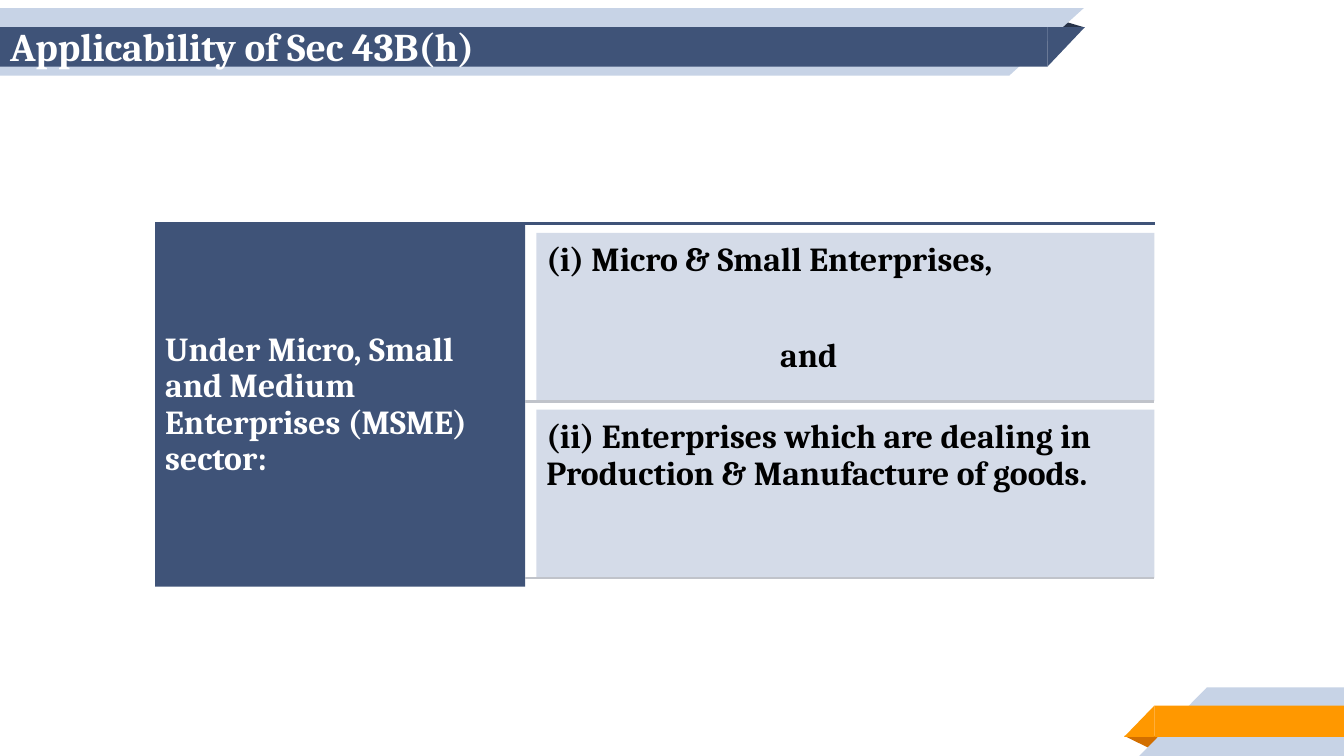
"""Build the slide on the applicability of Sec 43B(h)."""
from pptx import Presentation, util as u
from pptx.dml.color import RGBColor
from pptx.enum import shapes, text
from pptx.oxml import ns
from lxml import etree

NAVY = RGBColor(0x3F, 0x53, 0x78)
DARK_NAVY = RGBColor(0x26, 0x32, 0x48)
PALE_BLUE = RGBColor(0xC7, 0xD3, 0xE6)
PANEL = RGBColor(0xD4, 0xDB, 0xE8)
ORANGE = RGBColor(0xFF, 0x98, 0x00)
DARK_ORANGE = RGBColor(0xD2, 0x6F, 0x00)
RULE = RGBColor(0xC0, 0xC3, 0xCA)
WHITE = RGBColor(0xFF, 0xFF, 0xFF)
BLACK = RGBColor(0, 0, 0)
FONT = "Cambria"
RECTANGLE = shapes.MSO_SHAPE.RECTANGLE
TRIANGLE = shapes.MSO_SHAPE.ISOSCELES_TRIANGLE
RIGHT_TRIANGLE = shapes.MSO_SHAPE.RIGHT_TRIANGLE


def write(frame, content, size=24, color=BLACK, anchor=text.MSO_ANCHOR.TOP,
          line=0.9, after=8.4, before=0, indent=0):
    """Add one formatted paragraph to a text frame."""
    frame.word_wrap = True
    frame.auto_size = text.MSO_AUTO_SIZE.NONE
    frame.vertical_anchor = anchor
    frame.margin_left = frame.margin_right = u.Inches(0.1)
    frame.margin_top = frame.margin_bottom = u.Inches(0.1)
    paragraph = frame.add_paragraph() if frame.text else frame.paragraphs[0]
    paragraph.alignment = text.PP_ALIGN.LEFT
    paragraph.line_spacing = line
    paragraph.space_after = u.Pt(after)
    paragraph.space_before = u.Pt(before)
    if indent:
        paragraph._p.get_or_add_pPr().set("marL", str(u.Inches(indent)))
    run = paragraph.add_run()
    run.text = content
    run.font.name = FONT
    run.font.size = u.Pt(size)
    run.font.bold = True
    run.font.color.rgb = color


class Deck:
    """Hold the presentation and its current slide."""

    def __init__(self):
        self.presentation = Presentation()
        self.presentation.slide_width = u.Inches(13.33)
        self.presentation.slide_height = u.Inches(7.5)
        self.slide = self.presentation.slides.add_slide(self.presentation.slide_layouts[5])

    def shape(self, kind, box, fill, rotation=0, flip=False):
        shape = self.slide.shapes.add_shape(kind, *map(u.Inches, box))
        shape.shadow.inherit = False
        shape.fill.solid()
        shape.fill.fore_color.rgb = fill
        shape.line.fill.background()
        shape.rotation = rotation
        if flip:
            shape._element.spPr.find(ns.qn("a:xfrm")).set("flipH", "1")
        if kind == TRIANGLE:
            shape.adjustments[0] = 0.324
        return shape

    def band(self, left, top, width, height, tip, fill, upper):
        """Draw a bar with a slanted end, on the right if upper, else on the left."""
        bar_left = left if upper else left + tip
        tip_left = left + width - tip if upper else left
        rotation = 180 if upper else 0
        self.shape(RECTANGLE, (bar_left, top, width - tip, height), fill)
        self.shape(RIGHT_TRIANGLE, (tip_left, top, tip, height), fill, rotation, flip=True)

    def rule(self, left, right, top, color):
        line = self.slide.shapes.add_connector(
            shapes.MSO_CONNECTOR.STRAIGHT, *map(u.Inches, (left, top, right, top)))
        line.line.color.rgb = color
        line.line.width = u.Pt(2)
        etree.SubElement(line._element.spPr, ns.qn("a:effectLst"))

    def title(self, content, box):
        title = self.slide.shapes.title
        title.left, title.top, title.width, title.height = map(u.Inches, box)
        self.slide.shapes._spTree.append(title._element)
        write(title.text_frame, content, size=28, color=WHITE,
              anchor=text.MSO_ANCHOR.MIDDLE, line=1, after=0)


def main():
    deck = Deck()
    deck.shape(TRIANGLE, (10.01, 0.12, 0.74, 0.15), DARK_NAVY)
    deck.band(0, 0.08, 10.75, 0.67, 0.74, PALE_BLUE, upper=True)
    deck.band(0, 0.27, 10.76, 0.39, 0.37, NAVY, upper=True)
    deck.shape(TRIANGLE, (11.15, 7.3, 0.39, 0.13), DARK_ORANGE, rotation=180)
    deck.band(11.3, 6.82, 2.03, 0.68, 0.67, PALE_BLUE, upper=False)
    deck.band(11.15, 7, 2.18, 0.31, 0.3, ORANGE, upper=False)
    deck.title("Applicability of Sec 43B(h)", (0, 0.13, 10.76, 0.65))

    deck.rule(1.54, 11.46, 2.22, NAVY)
    sector = deck.shape(RECTANGLE, (1.54, 2.22, 3.67, 3.6), NAVY)
    write(sector.text_frame, "Under Micro, Small and Medium Enterprises (MSME) sector:",
          color=WHITE, anchor=text.MSO_ANCHOR.MIDDLE)

    conditions = [
        [("(i) Micro & Small Enterprises,", {}),
         ("and", {"before": 34, "indent": 2.32})],
        [("(ii) Enterprises which are dealing in Production & Manufacture of goods.", {})],
    ]
    for row, paragraphs in enumerate(conditions):
        top = 2.31 + row * 1.755
        panel = deck.shape(RECTANGLE, (5.32, top, 6.13, 1.67), PANEL)
        for content, style in paragraphs:
            write(panel.text_frame, content, **style)
        deck.rule(5.21, 11.45, top + 1.67, RULE)
    deck.presentation.save("out.pptx")


if __name__ == "__main__":
    main()
